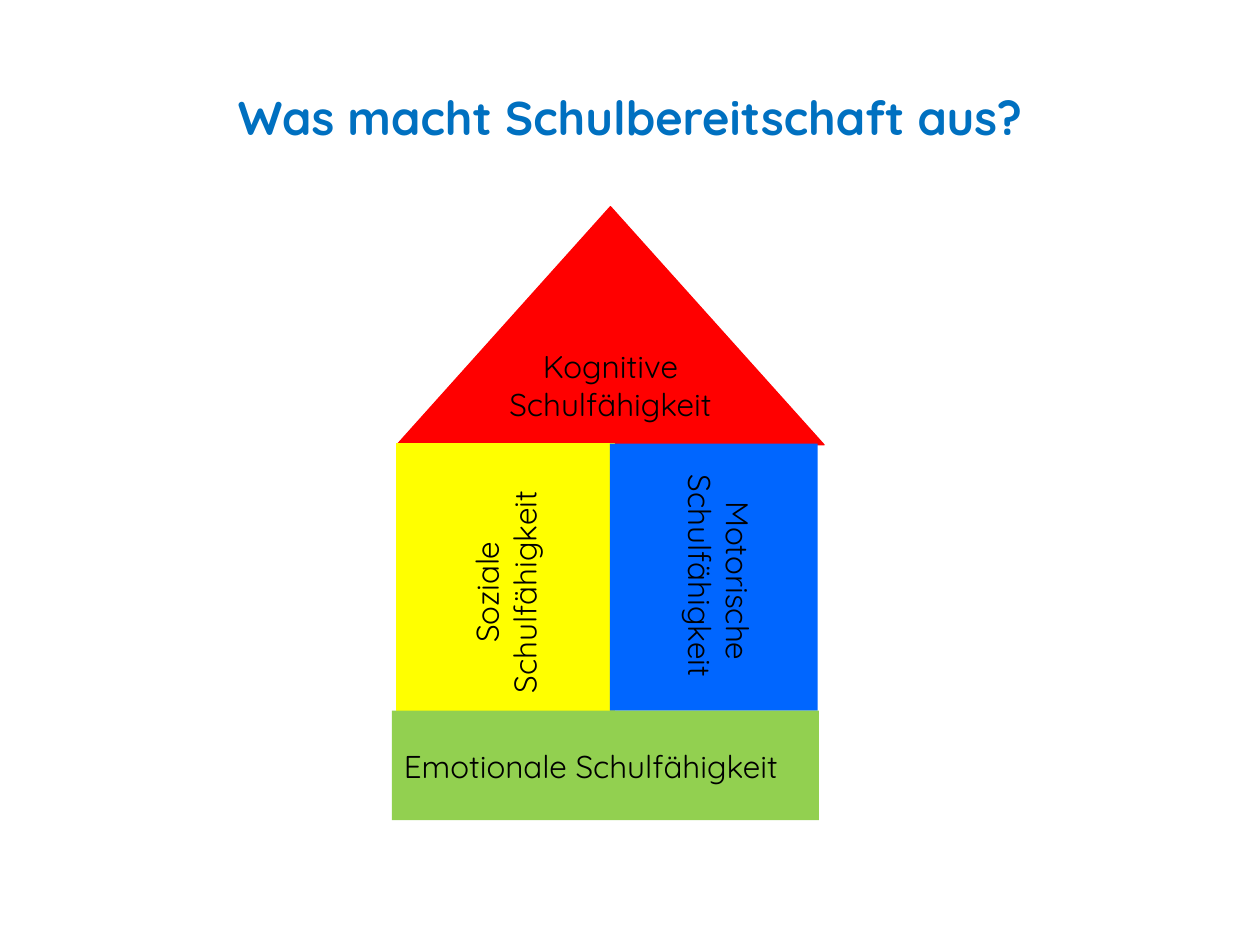
from pptx import Presentation
from pptx.dml.color import RGBColor as RGB
from pptx.enum.shapes import MSO_SHAPE as Kind
from pptx.enum.text import MSO_ANCHOR as Anchor, PP_ALIGN as Align
from pptx.util import Inches, Pt

FONT = "Quicksand"
HEX = {"title": "0070C0", "text": "000000", "roof": "FF0000",
       "left": "FFFF00", "right": "0066FF", "base": "92D050"}

# Content
TITLE = "Was macht Schulbereitschaft aus?"
ROOF = "Kognitive\nSchulfähigkeit"
BASE = "Emotionale Schulfähigkeit"
# text, centre x, centre y, turn, first-line indent
SIDES = [("Soziale Schulfähigkeit", 4.01, 4.58, 270, 0.4),
         ("Motorische Schulfähigkeit", 5.71, 4.69, 90, 0.21)]

# House grid: width and the heights where the storeys meet
W, H = 10, 7.5
WIDE, TOP, EAVES, FLOOR, FOOT = 3.39, 1.64, 3.52, 5.64, 6.51
LEFT, MID, END = 3.15, 4.84, 6.49
SIDE_W, SIDE_H = 2.04, 0.7
# colour, kind, left, top, width, height, outlined, text
PARTS = [
    ("roof", Kind.ISOSCELES_TRIANGLE, LEFT, TOP, WIDE, EAVES - TOP + 0.01, True, ROOF),
    ("left", Kind.RECTANGLE, LEFT, EAVES, MID - LEFT + 0.04, FLOOR - EAVES, True, ""),
    ("right", Kind.RECTANGLE, MID, EAVES, END - MID, FLOOR - EAVES, False, ""),
    ("base", Kind.RECTANGLE, LEFT - 0.04, FLOOR, WIDE, FOOT - FLOOR, False, BASE),
]


def write(frame, text, size=18, color="text", bold=False, align=Align.CENTER):
    frame.text = text
    for par in frame.paragraphs:
        par.alignment = align
        for run in par.runs:
            font = run.font
            font.name, font.size, font.bold = FONT, Pt(size), bold
            font.color.rgb = RGB.from_string(HEX[color])


def draw(slide, color, kind, x, y, w, h, edge, text):
    part = slide.shapes.add_shape(kind, *map(Inches, (x, y, w, h)))
    part.shadow.inherit = False
    paint = RGB.from_string(HEX[color])
    part.fill.solid()
    part.fill.fore_color.rgb = paint
    if edge:
        part.line.color.rgb = paint
        part.line.width = Pt(0.75)
    else:
        part.line.fill.background()
    if text:
        frame = part.text_frame
        frame.word_wrap = False
        frame.vertical_anchor = Anchor.MIDDLE
        write(frame, text)
    return part


def label(slide, text, x, y, turn, indent):
    box = slide.shapes.add_textbox(Inches(x - SIDE_W / 2), Inches(y - SIDE_H / 2),
                                   Inches(SIDE_W), Inches(SIDE_H))
    box.rotation = turn
    box.text_frame.word_wrap = True
    write(box.text_frame, text, align=Align.LEFT)
    props = box.text_frame.paragraphs[0]._p.get_or_add_pPr()
    props.set("marL", "0")
    props.set("indent", str(Inches(indent)))


def main():
    deck = Presentation()
    deck.slide_width, deck.slide_height = Inches(W), Inches(H)
    slide = deck.slides.add_slide(deck.slide_layouts[5])

    # Title
    head = slide.shapes.title
    head.left, head.top = Inches(0.05 * W), Inches(0.04 * H)
    head.width, head.height = Inches(0.9 * W), Inches(1.25)
    head.text_frame.vertical_anchor = Anchor.MIDDLE
    write(head.text_frame, TITLE, 27, "title", True)

    # House, then the upright labels on its walls
    parts = {row[0]: draw(slide, *row) for row in PARTS}
    parts["base"].text_frame.margin_right = Inches(0.33)
    for side in SIDES:
        label(slide, *side)

    deck.save("out.pptx")


if __name__ == "__main__":
    main()
